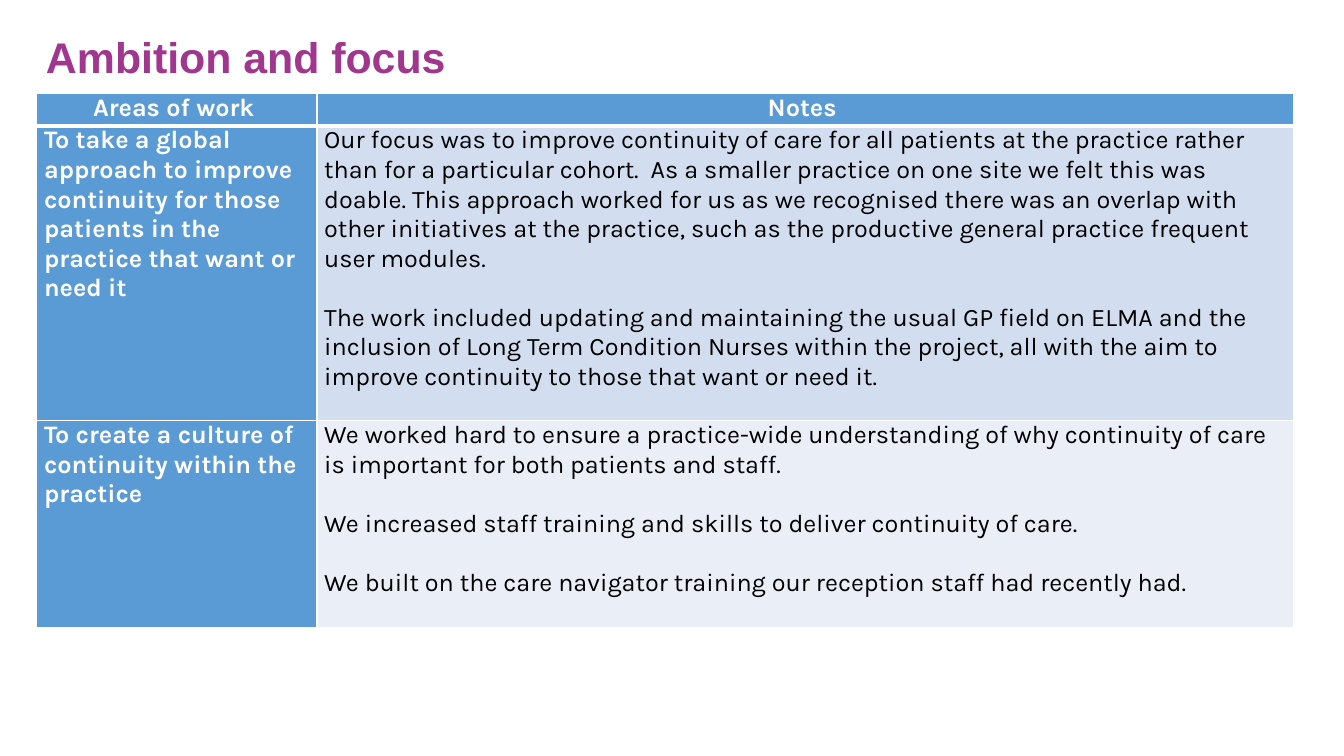
from lxml.etree import SubElement
from pptx import Presentation
from pptx.dml.color import RGBColor
from pptx.enum.text import MSO_ANCHOR, PP_ALIGN
from pptx.oxml.ns import qn
from pptx.util import Cm, Pt

HEADS = ["Areas of work ", "Notes "]
ROWS = [
    (
        "To take a global approach to improve continuity for those patients in the practice that want or need it",
        [
            "Our focus was to improve continuity of care for all patients at the practice rather than for a particular cohort.  As a smaller practice on one site we felt this was doable. This approach worked for us as we recognised there was an overlap with other initiatives at the practice, such as the productive general practice frequent user modules.",
            "The work included updating and maintaining the usual GP field on ELMA and the inclusion of Long Term Condition Nurses within the project, all with the aim to improve continuity to those that want or need it.",
        ],
    ),
    (
        "To create a culture of continuity within the practice",
        [
            "We worked hard to ensure a practice-wide understanding of why continuity of care is important for both patients and staff.",
            "We increased staff training and skills to deliver continuity of care.",
            "We built on the care navigator training our reception staff had recently had.",
        ],
    ),
]


def color(code):
    return RGBColor.from_string(code)


class Deck:
    white, black = "FFFFFF", "000000"
    plum, blue = "A1368F", "5B9BD5"
    bands = ["D2DEEF", "EAEFF7"]

    def __init__(self):
        self.file = Presentation()
        self.file.slide_width = Cm(33.87)
        self.file.slide_height = Cm(19.05)
        self.slide = self.file.slides.add_slide(self.file.slide_layouts[6])

    def run(self, para, text, size, face, tint, bold):
        run = para.add_run()
        run.text = text
        run.font.size = Pt(size)
        run.font.name = face
        run.font.bold = bold
        run.font.color.rgb = color(tint)

    def title(self, text, left, top, width, height):
        box = self.slide.shapes.add_textbox(Cm(left), Cm(top), Cm(width), Cm(height))
        frame = box.text_frame
        frame.word_wrap = True
        frame.vertical_anchor = MSO_ANCHOR.MIDDLE
        para = frame.paragraphs[0]
        para.line_spacing = 0.9
        self.run(para, text, 30.6, "Arial", self.plum, True)

    def edges(self, cell, top, bottom):
        props = cell._tc.get_or_add_tcPr()
        for side, width in zip("LRTB", (1, 1, top, bottom)):
            line = SubElement(props, qn("a:ln" + side), w=str(Pt(width)))
            fill = SubElement(line, qn("a:solidFill"))
            SubElement(fill, qn("a:srgbClr"), val=self.white)

    def cell(self, cell, texts, fill, tint, bold, align=PP_ALIGN.LEFT, top=1, bottom=1):
        self.edges(cell, top, bottom)
        cell.fill.solid()
        cell.fill.fore_color.rgb = color(fill)
        cell.margin_left = cell.margin_right = Cm(0.18)
        cell.margin_top = cell.margin_bottom = 0
        frame = cell.text_frame
        for index, text in enumerate(texts):
            para = frame.add_paragraph() if index else frame.paragraphs[0]
            para.alignment = align
            if index:
                para.space_before = Pt(21)
            self.run(para, text, 18, "Karla", tint, bold)

    def table(self, heads, rows, left, top, widths, heights):
        grid = self.slide.shapes.add_table(
            len(heights), len(widths), Cm(left), Cm(top), Cm(sum(widths)), Cm(sum(heights))
        ).table
        for col, width in zip(grid.columns, widths):
            col.width = Cm(width)
        for row, height in zip(grid.rows, heights):
            row.height = Cm(height)
        for col, head in enumerate(heads):
            self.cell(grid.cell(0, col), [head], self.blue, self.white, True, PP_ALIGN.CENTER, bottom=3)
        for index, (area, notes) in enumerate(rows, 1):
            edge = 3 if index == 1 else 1
            band = self.bands[(index - 1) % 2]
            self.cell(grid.cell(index, 0), [area], self.blue, self.white, True, top=edge)
            self.cell(grid.cell(index, 1), notes, band, self.black, False, top=edge)


def main():
    deck = Deck()
    deck.title("Ambition and focus", 0.91, 0.81, 27.28, 1.4)
    deck.table(HEADS, ROWS, 0.93, 2.36, [7.06, 24.61], [0.81, 7.43, 5.21])
    deck.file.save("out.pptx")


if __name__ == "__main__":
    main()
